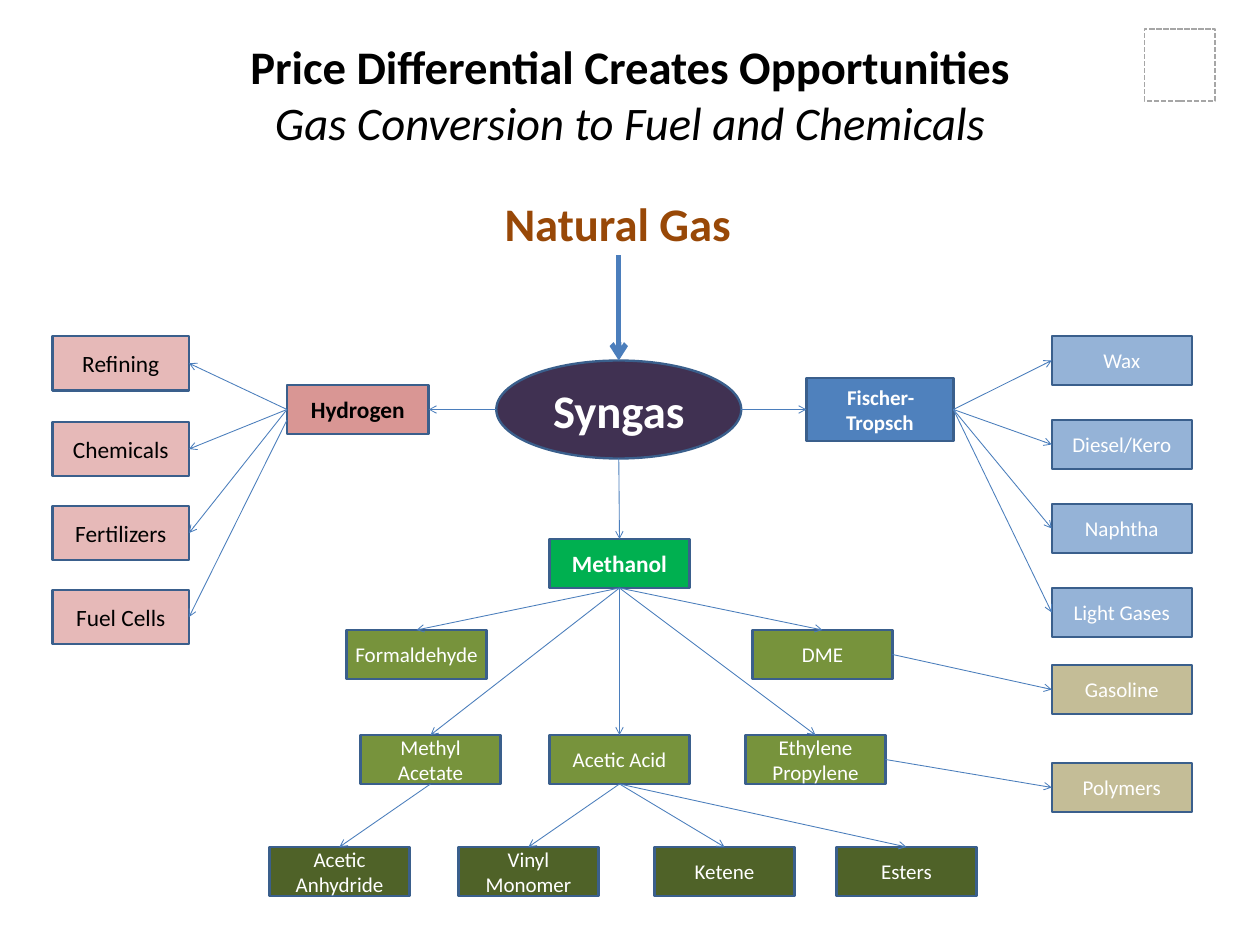
"""Build the slide on natural gas conversion through syngas."""
import dataclasses
import typing

import pptx
import pptx.dml.color
import pptx.enum.dml
import pptx.enum.shapes
import pptx.enum.text
import pptx.oxml
import pptx.oxml.ns
import pptx.util

RGBColor = pptx.dml.color.RGBColor
Shapes = pptx.enum.shapes.MSO_SHAPE

BLACK = RGBColor(0x00, 0x00, 0x00)
WHITE = RGBColor(0xFF, 0xFF, 0xFF)
GREY = RGBColor(0xA6, 0xA6, 0xA6)
OUTLINE = RGBColor(0x3A, 0x5F, 0x8C)
ARROW = RGBColor(0x4B, 0x7E, 0xBC)
BROWN = RGBColor(0x98, 0x48, 0x07)
PURPLE = RGBColor(0x40, 0x31, 0x52)
BLUE = RGBColor(0x4F, 0x81, 0xBD)
PALE_BLUE = RGBColor(0x95, 0xB3, 0xD7)
ROSE = RGBColor(0xD9, 0x96, 0x94)
PALE_ROSE = RGBColor(0xE6, 0xB9, 0xB8)
GREEN = RGBColor(0x00, 0xB0, 0x50)
OLIVE = RGBColor(0x77, 0x93, 0x3C)
DARK_OLIVE = RGBColor(0x4F, 0x62, 0x28)
TAN = RGBColor(0xC4, 0xBD, 0x97)

FONT = "Calibri"
CELL = pptx.util.Inches(1) / 24
TOP, LEFT, BOTTOM, RIGHT = range(4)
Point = tuple[float, float]


@dataclasses.dataclass(frozen=True)
class Style:
    """Look and size of a family of boxes, in grid cells and points."""
    fill: RGBColor
    color: RGBColor = WHITE
    size: int = 18
    bold: bool = False
    columns: float = 40
    rows: float = 14
    outline: float = 2
    geometry: Shapes = Shapes.RECTANGLE


@dataclasses.dataclass(frozen=True)
class Box:
    """A labelled box at a column and row of the grid."""
    label: str
    column: float
    row: float
    style: Style


@dataclasses.dataclass(frozen=True)
class Fan:
    """Arrows from one box or point to one side of several boxes."""
    source: typing.Union[str, Point]
    source_side: int
    targets: tuple[str, ...]
    target_side: int


HYDROGEN_USE = Style(PALE_ROSE, BLACK, 20, columns=39, rows=15.6)
LIQUID = Style(PALE_BLUE)
DERIVATIVE = Style(OLIVE)
ACETYL = Style(DARK_OLIVE)
END_PRODUCT = Style(TAN)

HYDROGEN_USES = ("Refining", "Chemicals", "Fertilizers", "Fuel Cells")
LIQUIDS = ("Wax", "Diesel/Kero", "Naphtha", "Light Gases")
RIGHT_COLUMN = 300.5
SYNGAS_COLUMN = 141.8
SYNGAS_AXIS = SYNGAS_COLUMN + 35

BOXES = [
    Box("Syngas", SYNGAS_COLUMN, 103,
        Style(PURPLE, size=40, bold=True, columns=70, rows=28, geometry=Shapes.OVAL)),
    Box("Hydrogen", 82, 110, Style(ROSE, BLACK, 20, True, columns=40.5, outline=2.25)),
    Box("Fischer-Tropsch", 230.4, 108, Style(BLUE, bold=True, columns=42, rows=18, outline=2.25)),
    Box("Methanol", 157, 154, Style(GREEN, size=20, bold=True, outline=2.25)),
    *(Box(label, 15, row, HYDROGEN_USE)
      for label, row in zip(HYDROGEN_USES, (96, 120.5, 144.5, 168.5))),
    *(Box(label, RIGHT_COLUMN, 96 + 24 * index, LIQUID) for index, label in enumerate(LIQUIDS)),
    Box("Formaldehyde", 99, 180, DERIVATIVE),
    Box("DME", 215, 180, DERIVATIVE),
    Box("Methyl Acetate", 103, 210, DERIVATIVE),
    Box("Acetic Acid", 157, 210, DERIVATIVE),
    Box("Ethylene Propylene", 213, 210, DERIVATIVE),
    Box("Acetic Anhydride", 77, 242, ACETYL),
    Box("Vinyl Monomer", 131, 242, ACETYL),
    Box("Ketene", 187, 242, ACETYL),
    Box("Esters", 239, 242, ACETYL),
    Box("Gasoline", RIGHT_COLUMN, 190, END_PRODUCT),
    Box("Polymers", RIGHT_COLUMN, 218, END_PRODUCT),
]

FANS = [
    Fan((SYNGAS_COLUMN, 117), LEFT, ("Hydrogen",), RIGHT),
    Fan((SYNGAS_COLUMN + 70, 117), RIGHT, ("Fischer-Tropsch",), LEFT),
    Fan((SYNGAS_AXIS, 131), BOTTOM, ("Methanol",), TOP),
    Fan("Hydrogen", LEFT, HYDROGEN_USES[:3], RIGHT),
    Fan((82, 120), LEFT, HYDROGEN_USES[3:], RIGHT),
    Fan("Fischer-Tropsch", RIGHT, LIQUIDS, LEFT),
    Fan("Methanol", BOTTOM,
        ("Formaldehyde", "DME", "Methyl Acetate", "Acetic Acid", "Ethylene Propylene"), TOP),
    Fan("Methyl Acetate", BOTTOM, ("Acetic Anhydride",), TOP),
    Fan("Acetic Acid", BOTTOM, ("Vinyl Monomer", "Ketene", "Esters"), TOP),
    Fan("DME", RIGHT, ("Gasoline",), LEFT),
    Fan("Ethylene Propylene", RIGHT, ("Polymers",), LEFT),
]


def cells(*counts: float) -> list[pptx.util.Emu]:
    """Convert grid cells to lengths."""
    return [pptx.util.Emu(round(count * CELL)) for count in counts]


def format_paragraph(paragraph, size: int, color: RGBColor, bold: bool, italic: bool = False) -> None:
    """Set the font of a whole paragraph."""
    font = paragraph.font
    font.name, font.size = FONT, pptx.util.Pt(size)
    font.bold, font.italic = bold, italic
    font.color.rgb = color


def draw_title(slide) -> None:
    """Place the two-line title across the slide."""
    title = slide.shapes.title
    title.left, title.top, title.width, title.height = cells(0, 9.4, 360, 34.8)
    frame = title.text_frame
    frame.text = "Price Differential Creates Opportunities\nGas Conversion to Fuel and Chemicals"
    frame.auto_size = pptx.enum.text.MSO_AUTO_SIZE.NONE
    for paragraph, bold in zip(frame.paragraphs, (True, False)):
        paragraph.alignment = pptx.enum.text.PP_ALIGN.CENTER
        format_paragraph(paragraph, 40, BLACK, bold, not bold)


def draw_emblem(slide) -> None:
    """Draw the plain dashed square in the top right corner."""
    square = slide.shapes.add_shape(Shapes.RECTANGLE, *cells(327, 8.2, 20.2, 20.6))
    square.shadow.inherit = False
    square.fill.background()
    square.line.color.rgb = GREY
    square.line.width = pptx.util.Pt(1.5)
    square.line.dash_style = pptx.enum.dml.MSO_LINE.SQUARE_DOT


def draw_box(slide, box: Box):
    """Draw one labelled box and return its shape."""
    style = box.style
    shape = slide.shapes.add_shape(
        style.geometry, *cells(box.column, box.row, style.columns, style.rows))
    shape.shadow.inherit = False
    shape.fill.solid()
    shape.fill.fore_color.rgb = style.fill
    shape.line.color.rgb = OUTLINE
    shape.line.width = pptx.util.Pt(style.outline)
    frame = shape.text_frame
    frame.text = box.label
    frame.word_wrap = True
    paragraph = frame.paragraphs[0]
    paragraph.alignment = pptx.enum.text.PP_ALIGN.CENTER
    format_paragraph(paragraph, style.size, style.color, style.bold)
    return shape


def draw_arrow(slide, start: Point, end: Point, width: float = 0.75):
    """Draw a straight arrow and return its connector."""
    connector = slide.shapes.add_connector(
        pptx.enum.shapes.MSO_CONNECTOR.STRAIGHT, *cells(*start, *end))
    connector.line.color.rgb = ARROW
    connector.line.width = pptx.util.Pt(width)
    namespace = pptx.oxml.ns.nsdecls("a")
    properties = connector._element.spPr
    properties.ln.append(pptx.oxml.parse_xml(f'<a:tailEnd {namespace} type="arrow"/>'))
    properties.append(pptx.oxml.parse_xml(f"<a:effectLst {namespace}/>"))
    return connector


def draw_fan(slide, fan: Fan, shapes: dict) -> None:
    """Join a source to each of its targets."""
    joined = isinstance(fan.source, str)
    start = (0, 0) if joined else fan.source
    for target in fan.targets:
        connector = draw_arrow(slide, start, start)
        if joined:
            connector.begin_connect(shapes[fan.source], fan.source_side)
        connector.end_connect(shapes[target], fan.target_side)


def draw_feedstock(slide) -> None:
    """Write the feedstock and its thick arrow into the syngas ellipse."""
    textbox = slide.shapes.add_textbox(*cells(SYNGAS_COLUMN, 54.5, 70.3, 18.5))
    frame = textbox.text_frame
    frame.text = "Natural Gas"
    frame.word_wrap = False
    format_paragraph(frame.paragraphs[0], 40, BROWN, True)
    draw_arrow(slide, (SYNGAS_AXIS, 73), (SYNGAS_AXIS, 103), 4.5)


def main() -> None:
    """Build and save the presentation."""
    presentation = pptx.Presentation()
    presentation.slide_width, presentation.slide_height = cells(360, 270)
    slide = presentation.slides.add_slide(presentation.slide_layouts.get_by_name("Title Only"))
    draw_title(slide)
    shapes = {box.label: draw_box(slide, box) for box in BOXES}
    for fan in FANS:
        draw_fan(slide, fan, shapes)
    draw_feedstock(slide)
    draw_emblem(slide)
    presentation.save("out.pptx")


if __name__ == "__main__":
    main()
